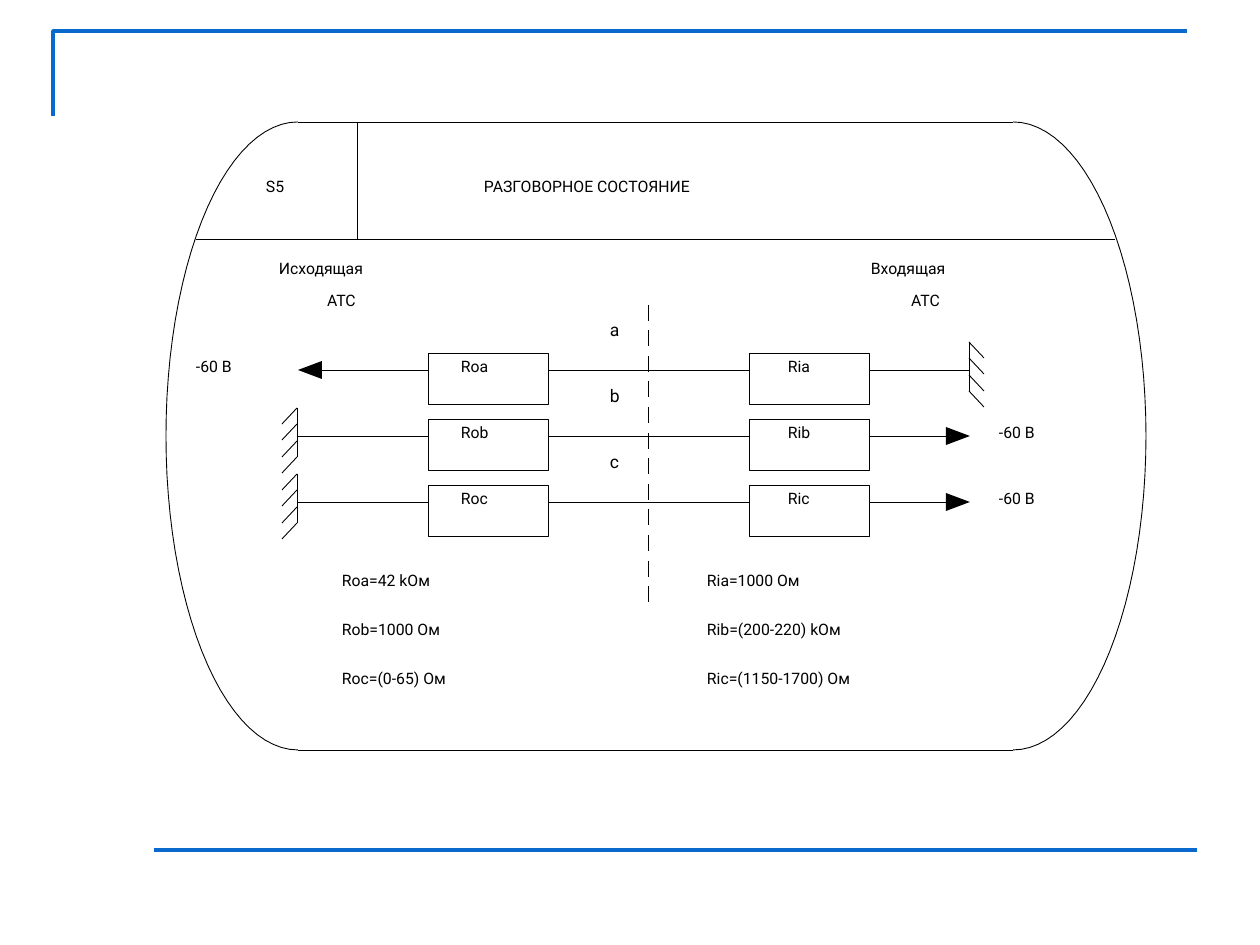
import math
from dataclasses import dataclass

from lxml import etree
from pptx import Presentation, util as u
from pptx.dml import color
from pptx.enum import shapes, text
from pptx.oxml import ns

EMU_PER_PX = 914400 / 126


def emu(px):
    return u.Emu(round(px * EMU_PER_PX))


@dataclass(frozen=True)
class Theme:
    ink: color.RGBColor = color.RGBColor(0, 0, 0)
    paper: color.RGBColor = color.RGBColor(255, 255, 255)
    accent: color.RGBColor = color.RGBColor(0x09, 0x69, 0xCD)
    font: str = "Roboto"
    label: int = 9
    wire_name: int = 10
    thin: float = 0.5
    thick: float = 2


class Diagram:
    def __init__(self, slide, theme):
        self.slide, self.theme = slide, theme

    def stroke(self, line, tint=None, width=None):
        line.color.rgb = tint or self.theme.ink
        line.width = u.Pt(width or self.theme.thin)

    def line(self, x1, y1, x2, y2, tint=None, width=None):
        connector = self.slide.shapes.add_connector(
            shapes.MSO_CONNECTOR.STRAIGHT, emu(x1), emu(y1), emu(x2), emu(y2))
        etree.SubElement(connector._element.spPr, ns.qn("a:effectLst"))
        self.stroke(connector.line, tint, width)

    def outline(self, points, tint=None, width=None, filled=False):
        start, *rest = [(emu(x), emu(y)) for x, y in points]
        builder = self.slide.shapes.build_freeform(*start)
        builder.add_line_segments(rest, close=filled)
        figure = builder.convert_to_shape()
        figure.shadow.inherit = False
        if filled:
            figure.fill.solid()
            figure.fill.fore_color.rgb = self.theme.ink
            figure.line.fill.background()
        else:
            figure.fill.background()
            self.stroke(figure.line, tint, width)

    def quarter_arc(self, cx, cy, rx, ry, steps=25):
        angles = [math.pi / 2 * i / steps for i in range(steps + 1)]
        self.outline([(cx + rx * math.sin(a), cy + ry * math.cos(a)) for a in angles])

    def arrowhead(self, tip, y, direction):
        back = tip - 24 * direction
        self.outline([(back, y - 9), (tip, y), (back, y + 9)], filled=True)

    def ground(self, x, y, direction):
        top = y - 28
        self.line(x, top + 49, x, top)
        for i in range(4):
            tick = top + 33 * i // 2
            self.line(x, tick, x + 15 * direction, tick + 16)

    def resistor(self, x, y):
        box = self.slide.shapes.add_shape(
            shapes.MSO_SHAPE.RECTANGLE, emu(x), emu(y), emu(120), emu(52))
        box.shadow.inherit = False
        box.fill.solid()
        box.fill.fore_color.rgb = self.theme.paper
        self.stroke(box.line)

    def text(self, x, y, width, words, size=None):
        size = size or self.theme.label
        label = self.slide.shapes.add_textbox(emu(x), emu(y), emu(width), emu(size * 2.1))
        frame = label.text_frame
        layout = dict(margin_left=0, margin_top=0, margin_right=0, margin_bottom=0,
                      word_wrap=False, auto_size=text.MSO_AUTO_SIZE.SHAPE_TO_FIT_TEXT)
        for name, value in layout.items():
            setattr(frame, name, value)
        run = frame.paragraphs[0].add_run()
        run.text = words
        for name, value in dict(name=self.theme.font, size=u.Pt(size)).items():
            setattr(run.font, name, value)
        run.font.color.rgb = self.theme.ink


def main():
    deck = Presentation()
    deck.slide_width, deck.slide_height = emu(1260), emu(945)
    theme = Theme()
    diagram = Diagram(deck.slides.add_slide(deck.slide_layouts[6]), theme)

    # Slide frame
    diagram.outline([(53, 116), (53, 31), (1187, 31)], theme.accent, theme.thick)
    diagram.line(154, 850, 1197, 850, theme.accent, theme.thick)

    # State symbol with rounded sides
    left, right, middle, half_height = 298, 1013, 436, 314
    for cx, rx in ((left, -132), (right, 133)):
        for ry in (-half_height, half_height):
            diagram.quarter_arc(cx, middle, rx, ry)
    for y in (middle - half_height, middle + half_height):
        diagram.line(left, y, right, y)

    # Header
    diagram.line(196, 239, 1115, 239)
    diagram.line(357, 239, 357, 123)
    diagram.text(266, 177, 19, "S5")
    diagram.text(484, 177, 224, "РАЗГОВОРНОЕ СОСТОЯНИЕ")

    # Exchange names
    for x, y, width, words in (
        (279, 259, 84, "Исходящая"), (327, 291, 31, "АТС"),
        (871, 259, 75, "Входящая"), (911, 291, 31, "АТС"),
    ):
        diagram.text(x, y, width, words)

    # Dashed boundary between the exchanges
    for i in range(12):
        dash = 305 + 256 * i // 10
        diagram.line(648, dash, 648, dash + 16)

    # Wires: name, outgoing and incoming resistors, side of the battery
    wires = (("а", "Roa", "Ria", -1), ("b", "Rob", "Rib", 1), ("c", "Roc", "Ric", 1))
    for i, (wire, outgoing, incoming, side) in enumerate(wires):
        y = 370 + 66 * i
        if side < 0:
            battery, earth, voltage_x = 298, 969, 196
        else:
            battery, earth, voltage_x = 970, 297, 999
        diagram.line(earth, y, battery - 22 * side, y)
        diagram.arrowhead(battery, y, side)
        diagram.ground(earth, y, -side)
        diagram.text(voltage_x, y - 13, 38, "-60 В")
        diagram.text(610, y - 51, 10, wire, theme.wire_name)
        for x, name, name_x, width in ((428, outgoing, 461, 29), (749, incoming, 788, 24)):
            diagram.resistor(x, y - 17)
            diagram.text(name_x, y - 13, width, name)

    # Resistor values
    values = (
        (342, (("Roa=42 kОм", 91), ("Rob=1000 Ом", 101), ("Roc=(0-65) Ом", 107))),
        (707, (("Ria=1000 Ом", 96), ("Rib=(200-220) kОм", 136), ("Ric=(1150-1700) Ом", 145))),
    )
    for x, column in values:
        for i, (words, width) in enumerate(column):
            diagram.text(x, 571 + 49 * i, width, words)

    deck.save("out.pptx")


if __name__ == "__main__":
    main()
